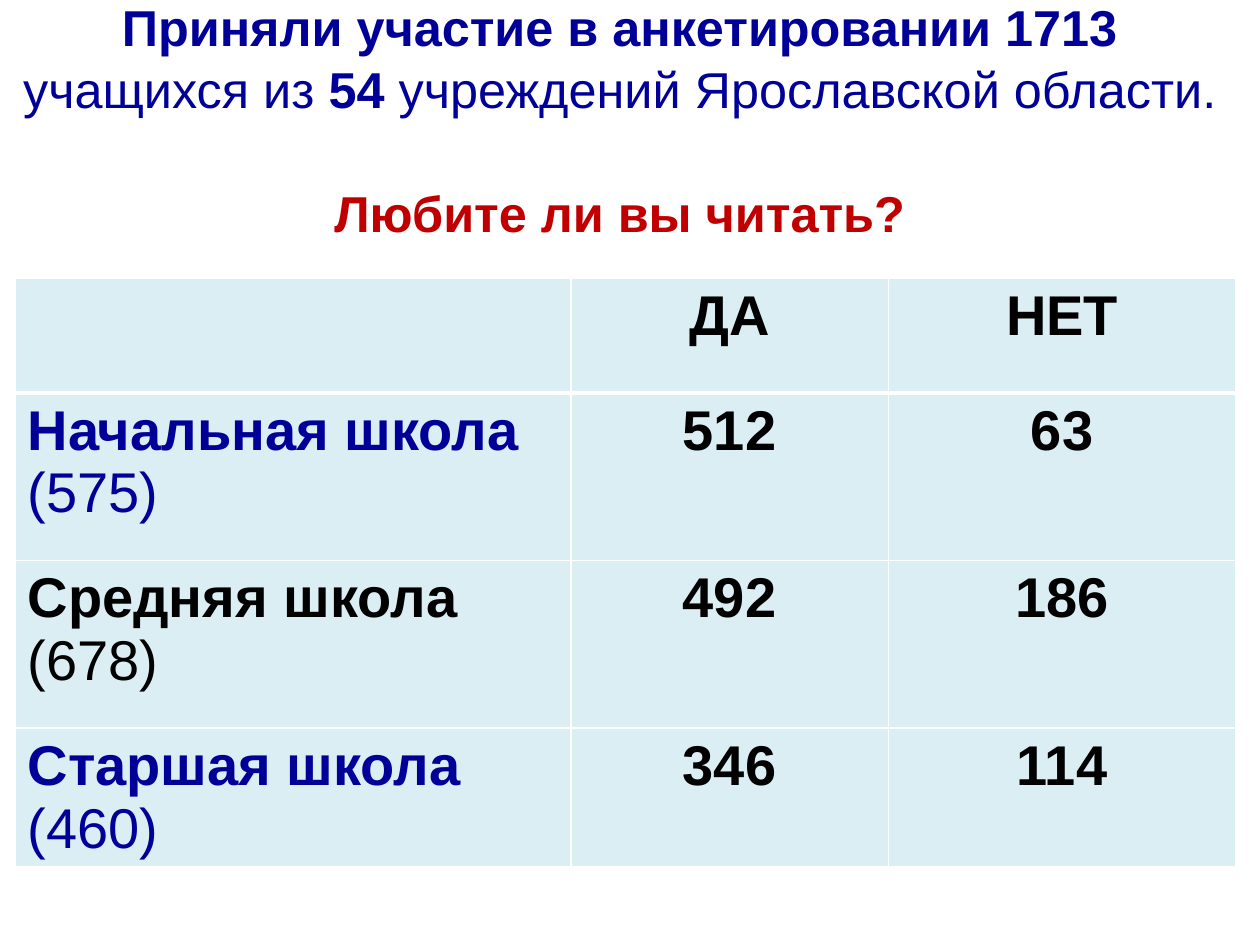
from lxml import etree
from pptx import Presentation
from pptx.dml.color import RGBColor
from pptx.enum import text
from pptx.oxml import ns
from pptx.util import Inches, Pt

THEME = {
    "font": "Arial", "title_size": 28.8, "table_size": 32,
    "navy": "000099", "red": "C00000", "black": "000000",
    "cell": "DBEEF4", "border": "FFFFFF",
}
CENTER, LEFT = text.PP_ALIGN.CENTER, text.PP_ALIGN.LEFT


def add_span(para, words, size, color, bold):
    span = para.add_run()
    span.text = words
    font = {"name": THEME["font"], "size": Pt(THEME[size]), "bold": bold}
    for name, value in font.items():
        setattr(span.font, name, value)
    span.font.color.rgb = RGBColor.from_string(THEME[color])


def add_borders(cell, widths):
    properties = cell._tc.get_or_add_tcPr()
    for position, (side, width) in enumerate(widths.items()):
        line = etree.Element(ns.qn("a:ln" + side), w=str(Pt(width)))
        fill = etree.SubElement(line, ns.qn("a:solidFill"))
        etree.SubElement(fill, ns.qn("a:srgbClr"), val=THEME["border"])
        properties.insert(position, line)


deck = Presentation()
deck.slide_width, deck.slide_height = Inches(10), Inches(7.5)
page = deck.slides.add_slide(deck.slide_layouts[5])

# Title: survey summary and question
title = page.shapes.title
title_place = {"left": 0, "top": 0, "width": Inches(9.84), "height": Inches(1.87)}
for name, value in title_place.items():
    setattr(title, name, value)
frame = title.text_frame
frame.word_wrap = True
frame.auto_size = text.MSO_AUTO_SIZE.NONE
frame.vertical_anchor = text.MSO_ANCHOR.MIDDLE
title_lines = [
    [("Приняли участие в анкетировании 1713", "navy", True),
     (" учащихся из ", "navy", False),
     ("54", "navy", True),
     (" учреждений Ярославской области.", "navy", False)],
    [("Любите ли вы читать?", "red", True)],
]
for index, spans in enumerate(title_lines):
    para = frame.add_paragraph() if index else frame.paragraphs[0]
    para.alignment = CENTER
    para.line_spacing = 1.04
    para.space_before = Pt(34.5 * index)
    for words, color, bold in spans:
        add_span(para, words, "title_size", color, bold)

# Table: each cell is a list of lines, the first of them bold
rows = [
    ("black", [[], ["ДА"], ["НЕТ"]]),
    ("navy", [["Начальная школа", "(575)"], ["512"], ["63"]]),
    ("black", [["Средняя школа", "(678)"], ["492"], ["186"]]),
    ("navy", [["Старшая школа", "(460)"], ["346"], ["114"]]),
]
column_widths = [4.41, 2.52, 2.76]
row_heights = [0.91, 1.33, 1.33, 1.03]
table = page.shapes.add_table(
    len(rows), len(column_widths), Inches(0.12), Inches(2.21),
    Inches(sum(column_widths)), Inches(sum(row_heights))).table
for column, width in zip(table.columns, column_widths):
    column.width = Inches(width)
for row, height in zip(table.rows, row_heights):
    row.height = Inches(height)

for r, (label_color, cells) in enumerate(rows):
    for c, lines in enumerate(cells):
        cell = table.cell(r, c)
        cell.fill.solid()
        cell.fill.fore_color.rgb = RGBColor.from_string(THEME["cell"])
        add_borders(cell, {"L": 1, "R": 1, "T": 1, "B": 1 if r else 3})
        for index, words in enumerate(lines):
            frame = cell.text_frame
            para = frame.add_paragraph() if index else frame.paragraphs[0]
            para.alignment = CENTER if c else LEFT
            add_span(para, words, "table_size",
                     "black" if c else label_color, index == 0)

deck.save("out.pptx")
